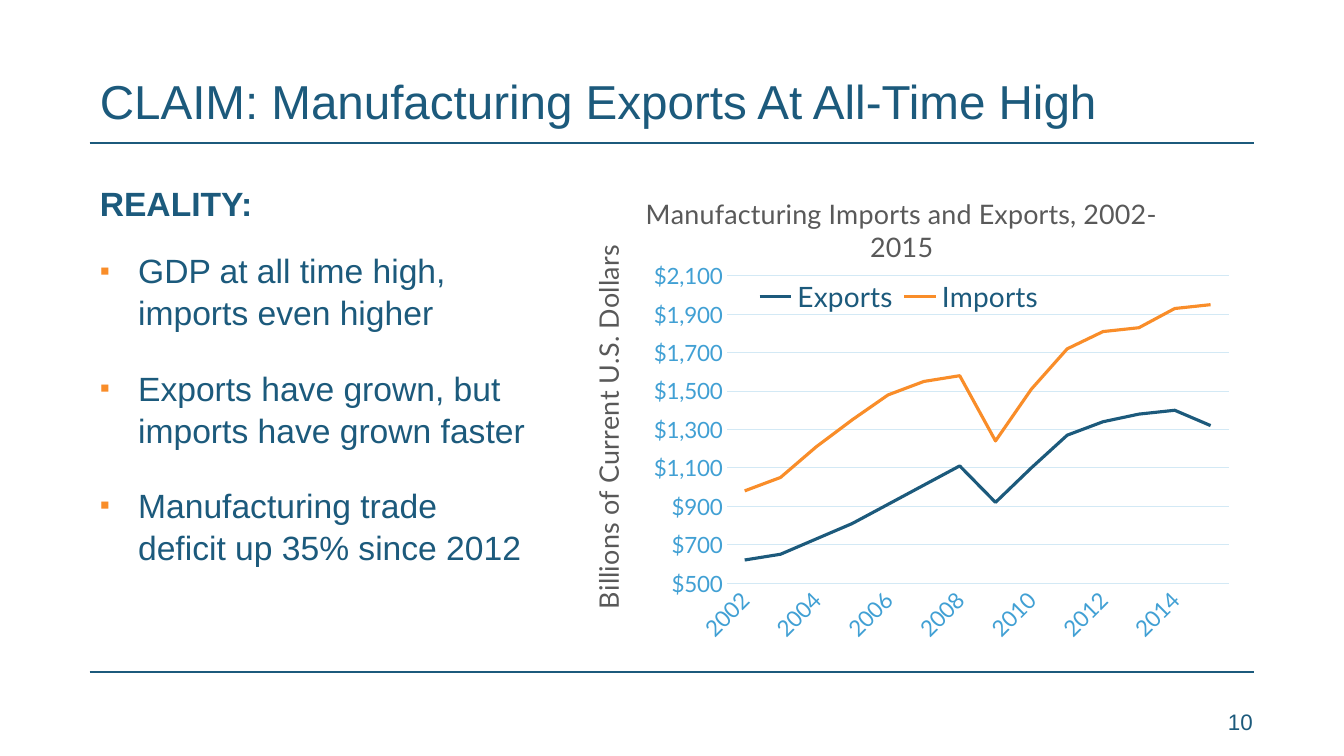
from dataclasses import dataclass

from lxml import etree
from pptx import Presentation
from pptx import util as u
from pptx.chart.data import CategoryChartData
from pptx.dml.color import RGBColor
from pptx.enum import chart as charts, shapes, text
from pptx.oxml.ns import qn


@dataclass(frozen=True)
class Theme:
    navy: str = "1C5A7C"
    orange: str = "F98D29"
    sky: str = "41A0D4"
    pale: str = "D3E9F5"
    gray: str = "595959"
    body_font: str = "Arial"
    chart_font: str = "Lato"
    title_size: float = 34
    body_size: float = 24
    legend_size: float = 20
    chart_title_size: float = 19.2
    small_size: float = 16


class SlideBuilder:
    def __init__(self, slide, theme):
        self.slide = slide
        self.theme = theme

    def style(self, font, size, color, name, bold=False):
        font.size = u.Pt(size)
        font.name = name
        font.bold = bold
        font.color.rgb = RGBColor.from_string(color)

    def stroke(self, line, color, width):
        line.color.rgb = RGBColor.from_string(color)
        line.width = u.Pt(width)

    def place(self, shape, left, top, width, height):
        shape.left, shape.top = u.Inches(left), u.Inches(top)
        shape.width, shape.height = u.Inches(width), u.Inches(height)

    def rule(self, left, right, top):
        connector = self.slide.shapes.add_connector(
            shapes.MSO_CONNECTOR.STRAIGHT,
            u.Inches(left), u.Inches(top), u.Inches(right), u.Inches(top))
        self.stroke(connector.line, self.theme.navy, 1.25)
        etree.SubElement(connector.element.spPr, qn("a:effectLst"))

    def title(self, wording, *box):
        shape = self.slide.shapes.title
        self.place(shape, *box)
        frame = shape.text_frame
        frame.text = wording
        frame.vertical_anchor = text.MSO_ANCHOR.BOTTOM
        frame.auto_size = text.MSO_AUTO_SIZE.NONE
        paragraph = frame.paragraphs[0]
        paragraph.alignment = text.PP_ALIGN.LEFT
        self.style(paragraph.font, self.theme.title_size, self.theme.navy, self.theme.body_font)

    def bullet(self, paragraph):
        properties = paragraph._p.get_or_add_pPr()
        properties.set("marL", str(u.Inches(0.38)))
        properties.set("indent", str(u.Inches(-0.38)))
        color = etree.SubElement(properties, qn("a:buClr"))
        etree.SubElement(color, qn("a:srgbClr"), val=self.theme.orange)
        etree.SubElement(properties, qn("a:buSzPct"), val="85000")
        etree.SubElement(properties, qn("a:buFont"), typeface=self.theme.body_font)
        etree.SubElement(properties, qn("a:buChar"), char="▪")

    def heading(self, paragraph):
        properties = paragraph._p.get_or_add_pPr()
        properties.set("marL", "0")
        properties.set("indent", "0")
        etree.SubElement(properties, qn("a:buNone"))

    def body(self, heading, bullets, *box):
        shape = self.slide.placeholders[1]
        self.place(shape, *box)
        frame = shape.text_frame
        frame.auto_size = text.MSO_AUTO_SIZE.NONE
        frame.text = "\n".join([heading, *bullets])
        for index, paragraph in enumerate(frame.paragraphs):
            is_heading = index == 0
            if is_heading:
                self.heading(paragraph)
            else:
                self.bullet(paragraph)
            paragraph.space_before = u.Pt(0)
            paragraph.space_after = u.Pt(18 if is_heading else 24)
            paragraph.line_spacing = 1.04
            self.style(paragraph.font, self.theme.body_size, self.theme.navy,
                       self.theme.body_font, is_heading)

    def page_number(self, wording, *box):
        shape = self.slide.shapes.add_textbox(*map(u.Inches, box))
        shape.text_frame.word_wrap = True
        paragraph = shape.text_frame.paragraphs[0]
        paragraph.text = wording
        self.style(paragraph.font, self.theme.small_size, self.theme.navy, self.theme.body_font)

    def layout(self, element, position, **values):
        for old in element.findall(qn("c:layout")):
            element.remove(old)
        layout = etree.Element(qn("c:layout"))
        manual = etree.SubElement(layout, qn("c:manualLayout"))
        if "w" in values and element.tag == qn("c:plotArea"):
            etree.SubElement(manual, qn("c:layoutTarget"), val="inner")
        for key in ("x", "y"):
            etree.SubElement(manual, qn(f"c:{key}Mode"), val="edge")
        for key, value in values.items():
            etree.SubElement(manual, qn(f"c:{key}"), val=str(value))
        element.insert(position, layout)

    def chart_caption(self, caption, wording, x, y):
        paragraph = caption.text_frame.paragraphs[0]
        paragraph.text = wording
        self.style(paragraph.font, self.theme.chart_title_size, self.theme.gray,
                   self.theme.chart_font)
        self.layout(caption._element, 1, x=x, y=y)

    def line_chart(self, title, axis_title, categories, series, *box):
        theme = self.theme
        data = CategoryChartData(number_format='"$"#,##0')
        data.categories = categories
        for name, (values, _) in series.items():
            data.add_series(name, values)
        chart = self.slide.shapes.add_chart(
            charts.XL_CHART_TYPE.LINE, *map(u.Inches, box), data).chart
        self.style(chart.font, theme.legend_size, theme.navy, theme.chart_font)
        chart.has_title = True
        self.chart_caption(chart.chart_title, title, 0.14, 0.05)

        plot = chart.plots[0]
        plot.vary_by_categories = False
        for line in plot.series:
            line.smooth = False
            self.stroke(line.format.line, series[line.name][1], 2.25)

        category_axis, value_axis = chart.category_axis, chart.value_axis
        for axis in (category_axis, value_axis):
            axis.major_tick_mark = axis.minor_tick_mark = charts.XL_TICK_MARK.NONE
            self.style(axis.tick_labels.font, theme.small_size, theme.sky, theme.chart_font)
        self.stroke(category_axis.format.line, theme.pale, 0.75)
        category_axis._element.find(qn("c:txPr")).find(qn("a:bodyPr")).set("rot", "-2700000")
        skip = etree.Element(qn("c:tickLblSkip"), val="2")
        category_axis._element.find(qn("c:noMultiLvlLbl")).addprevious(skip)

        value_axis.minimum_scale, value_axis.maximum_scale = 500, 2100
        value_axis.major_unit = 200
        value_axis.format.line.fill.background()
        self.stroke(value_axis.major_gridlines.format.line, theme.pale, 0.75)
        value_axis.tick_labels.number_format = '"$"#,##0'
        value_axis.tick_labels.number_format_is_linked = False
        self.chart_caption(value_axis.axis_title, axis_title, 0.06, 0.15)
        rotation = value_axis.axis_title._element.find(".//" + qn("a:bodyPr"))
        rotation.set("rot", "-5400000")
        rotation.set("vert", "horz")

        chart.has_legend = True
        chart.legend.position = charts.XL_LEGEND_POSITION.TOP
        chart.legend.include_in_layout = False
        self.style(chart.legend.font, theme.legend_size, theme.navy, theme.chart_font)
        self.layout(chart.legend._element, 1, x=0.29, y=0.22, w=0.42, h=0.08)
        plot_area = chart.element.find(".//" + qn("c:plotArea"))
        self.layout(plot_area, 0, x=0.26, y=0.22, w=0.7, h=0.6)


def main():
    theme = Theme()
    presentation = Presentation()
    presentation.slide_width = u.Inches(13.33)
    presentation.slide_height = u.Inches(7.5)
    slide = presentation.slides.add_slide(presentation.slide_layouts[1])
    builder = SlideBuilder(slide, theme)
    for top in (1.42, 6.67):
        builder.rule(0.89, 12.44, top)
    builder.title("CLAIM: Manufacturing Exports At All-Time High", 0.89, 0.33, 11.56, 1)
    builder.page_number("10", 12.08, 6.98, 0.5, 0.31)
    builder.body("REALITY:", [
        "GDP at all time high, imports even higher",
        "Exports have grown, but imports have grown faster",
        "Manufacturing trade deficit up 35% since 2012",
    ], 0.89, 1.75, 4.44, 4.83)
    exports = [620, 650, 730, 810, 910, 1010, 1110, 920, 1100, 1270, 1340, 1380, 1400, 1320]
    imports = [980, 1050, 1210, 1350, 1480, 1550, 1580, 1240, 1510, 1720, 1810, 1830, 1930, 1950]
    builder.line_chart(
        "Manufacturing Imports and Exports, 2002-2015",
        "Billions of Current U.S. Dollars",
        [str(year) for year in range(2002, 2016)],
        {"Exports": (exports, theme.navy), "Imports": (imports, theme.orange)},
        5.36, 1.62, 7.11, 5.08)
    presentation.save("out.pptx")


if __name__ == "__main__":
    main()
